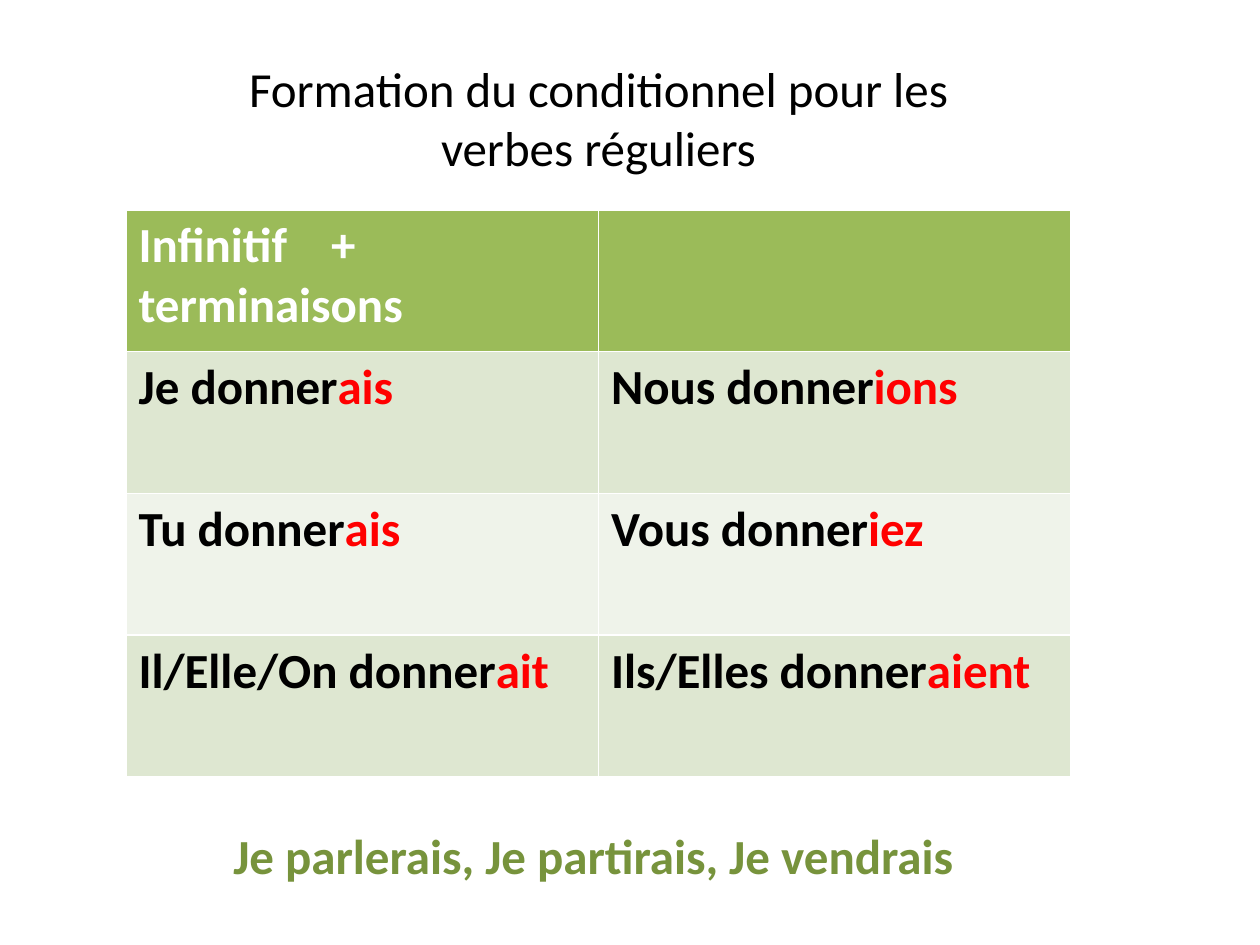
from lxml.etree import SubElement
from pptx import Presentation
from pptx.dml.color import RGBColor
from pptx.enum.text import MSO_ANCHOR, MSO_AUTO_SIZE, PP_ALIGN
from pptx.oxml.ns import qn
from pptx.util import Pt

# Content
TITLE = "Formation du conditionnel pour les verbes réguliers"
HEADER = "Infinitif\t+ terminaisons"
STEM = "donner"
FORMS = [  # (pronoun, ending) for singular and plural
    [("Je", "ais"), ("Nous", "ions")],
    [("Tu", "ais"), ("Vous", "iez")],
    [("Il/Elle/On", "ait"), ("Ils/Elles", "aient")],
]
EXAMPLES = "Je parlerais, Je partirais, Je vendrais"

COLORS = {
    "black": "000000", "white": "FFFFFF", "ending": "FF0000",
    "header": "9BBB59", "odd": "DEE7D1", "even": "EFF3EA", "examples": "77933C",
}
FONT = {"name": "Calibri", "size": Pt(28)}
COL_W, ROW_H = 270, 81
PLUS_TAB = 110


def rgb(name):
    return RGBColor.from_string(COLORS[name])


def add_run(p, text, color, bold=True):
    r = p.add_run()
    r.text = text
    for key, value in {**FONT, "bold": bold}.items():
        setattr(r.font, key, value)
    r.font.color.rgb = rgb(color)


def fill_box(sp, box, text, color, bold):
    for key, value in zip(("left", "top", "width", "height"), box):
        setattr(sp, key, Pt(value))
    tf = sp.text_frame
    frame = {"word_wrap": True, "auto_size": MSO_AUTO_SIZE.SHAPE_TO_FIT_TEXT,
             "vertical_anchor": MSO_ANCHOR.TOP}
    for key, value in frame.items():
        setattr(tf, key, value)
    p = tf.paragraphs[0]
    p.alignment = PP_ALIGN.CENTER
    add_run(p, text, color, bold)


prs = Presentation()
prs.slide_width, prs.slide_height = Pt(720), Pt(540)
s = prs.slides.add_slide(prs.slide_layouts[5])

# Title
fill_box(s.shapes.title, (132, 30, 420, 75), TITLE, "black", False)

# Conjugation table
n_rows = len(FORMS) + 1
table = s.shapes.add_table(n_rows, 2, Pt(72), Pt(120),
                           Pt(2 * COL_W), Pt(n_rows * ROW_H)).table
for i, row in enumerate(table.rows):
    row.height = Pt(ROW_H)
    for cell in row.cells:
        cell.fill.solid()
        cell.fill.fore_color.rgb = rgb("header" if i == 0 else "odd" if i % 2 else "even")

p = table.cell(0, 0).text_frame.paragraphs[0]
add_run(p, HEADER, "white")
tabs = SubElement(p._p.get_or_add_pPr(), qn("a:tabLst"))
SubElement(tabs, qn("a:tab"), pos=str(Pt(PLUS_TAB)), algn="l")

for i, forms in enumerate(FORMS, 1):
    for j, (pronoun, ending) in enumerate(forms):
        p = table.cell(i, j).text_frame.paragraphs[0]
        add_run(p, f"{pronoun} {STEM}", "black")
        add_run(p, ending, "ending")

# Further examples
fill_box(s.shapes.add_textbox(0, 0, 0, 0), (90, 468, 498, 41), EXAMPLES, "examples", True)

prs.save("out.pptx")
